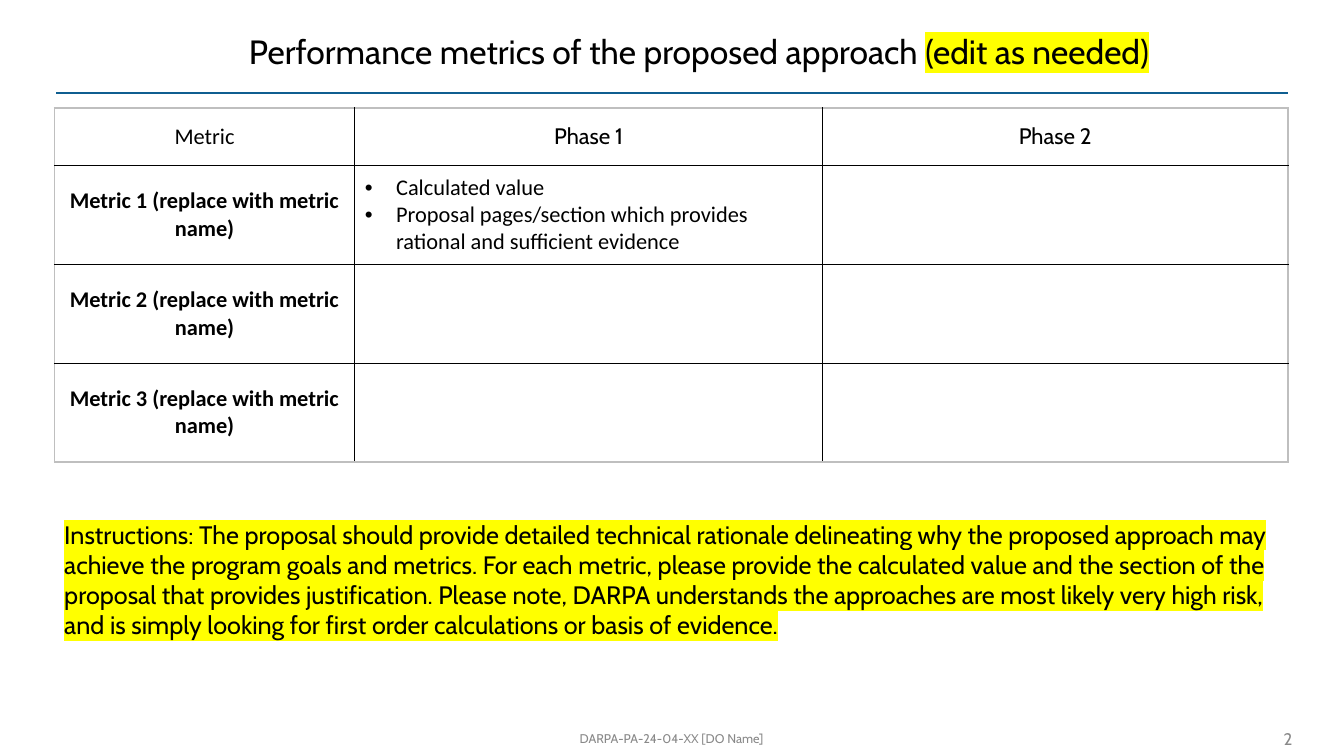
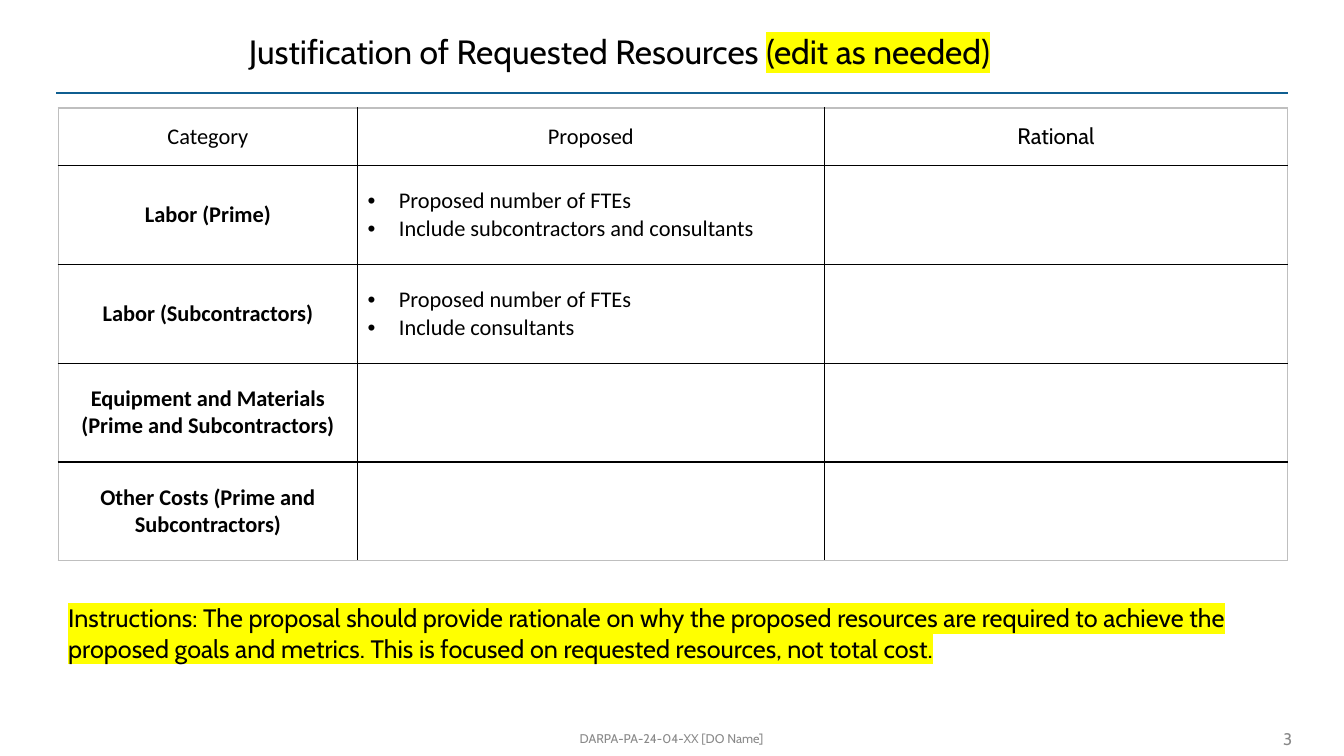
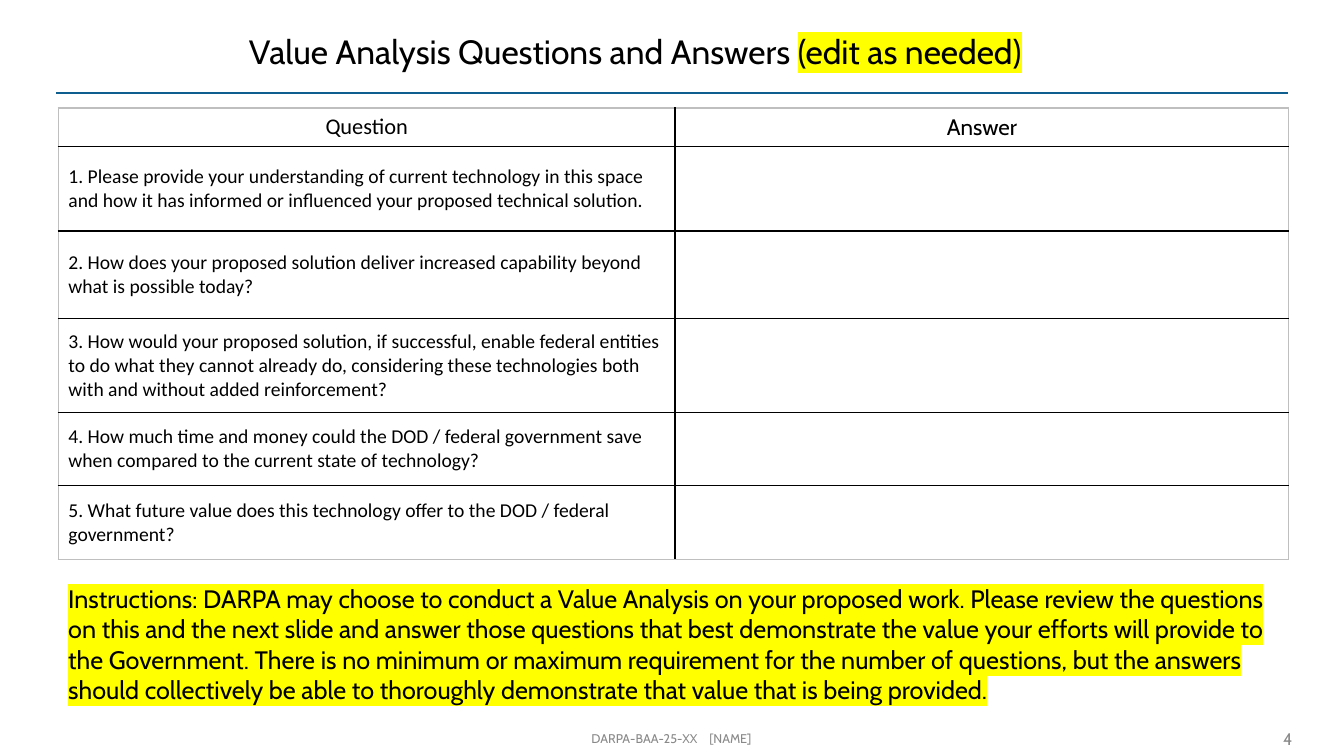
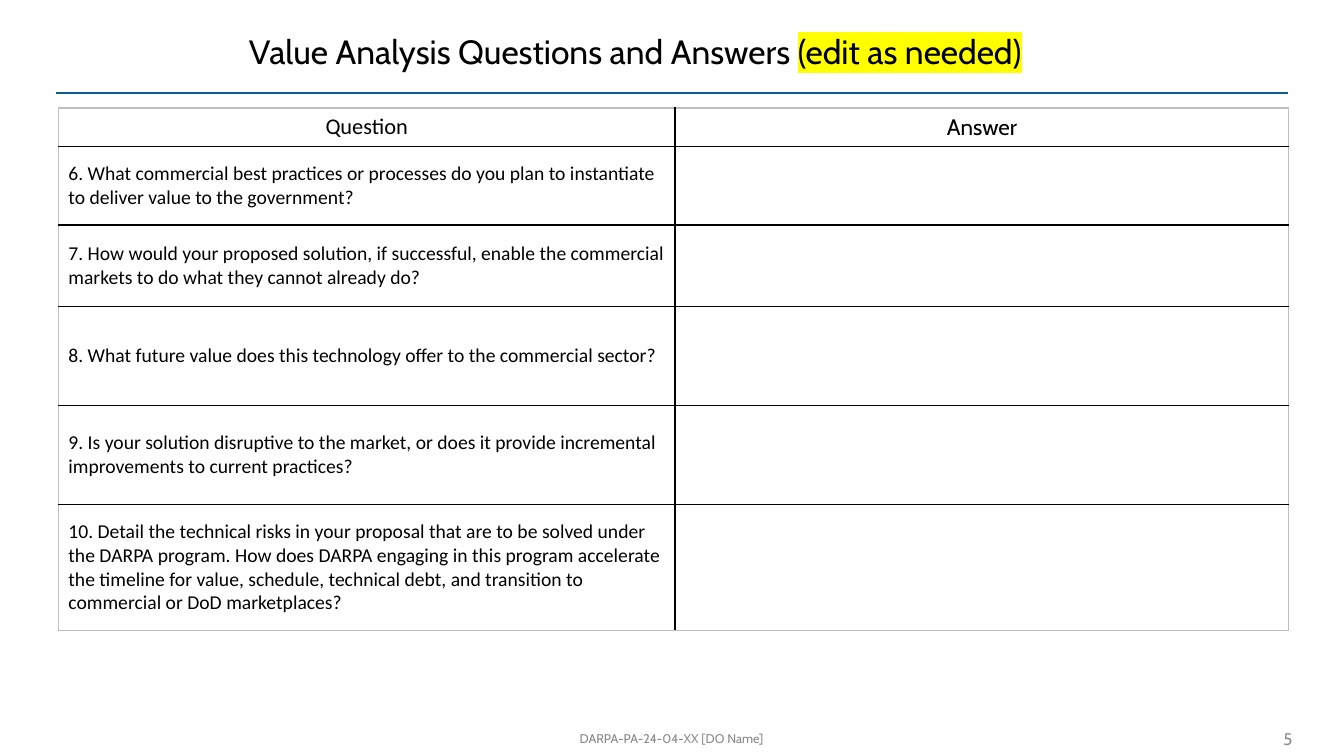
from lxml.etree import SubElement
from pptx import Presentation
from pptx.dml.color import RGBColor as RGB
from pptx.enum.shapes import MSO_CONNECTOR as CONN
from pptx.enum.text import MSO_ANCHOR as ANCHOR, MSO_AUTO_SIZE as AUTO, PP_ALIGN as ALIGN
from pptx.oxml.ns import qn
from pptx.util import Cm, Pt

COLORS = {
    "text": "000000",
    "rule": "0F5E90",
    "muted": "898989",
    "mark": "FFFF00",
    "cell": "FFFFFF",
    "grid": "000000",
    "edge": "BFBFBF",
}
TITLE_FONT, CELL_FONT = "Cabin", "Calibri"
TITLE_BOX = (6.02, 0.43, 26.44, 1.7)
RULE = (1.42, 2.34, 32.46, 2.34)
FOOTER_BOX = (4.93, 18.19, 23.98, 0.84)
NUMBER_BOX = (30, 18.21, 2.82, 0.81)
TABLE_TOP = 2.72
BULLET_INDENT = 0.79


def add_run(p, text, size, font=TITLE_FONT, color="text", bold=False, mark=False, spacing=0):
    r = p.add_run()
    r.text = text
    r.font.size = Pt(size)
    r.font.bold = bold
    r.font.color.rgb = RGB.from_string(COLORS[color])
    rPr = r.font._element
    if mark:
        SubElement(SubElement(rPr, qn("a:highlight")), qn("a:srgbClr"), val=COLORS["mark"])
    if spacing:
        rPr.set("spc", str(spacing))
    r.font.name = font


def add_text_box(s, box, align, anchor):
    tf = s.shapes.add_textbox(*map(Cm, box)).text_frame
    tf.word_wrap = True
    tf.vertical_anchor = anchor
    tf.paragraphs[0].alignment = align
    return tf


def add_title(s, text):
    sp = s.shapes.title
    sp.left, sp.top, sp.width, sp.height = map(Cm, TITLE_BOX)
    tf = sp.text_frame
    tf.vertical_anchor = ANCHOR.MIDDLE
    p = tf.paragraphs[0]
    p.alignment = ALIGN.LEFT
    add_run(p, text + " ", 24)
    add_run(p, "(edit as needed)", 24, mark=True)


def add_rule(s):
    line = s.shapes.add_connector(CONN.STRAIGHT, *map(Cm, RULE))
    line.line.color.rgb = RGB.from_string(COLORS["rule"])
    line.line.width = Pt(1.75)
    SubElement(line._element.spPr, qn("a:effectLst"))


def add_footer(s, parts, number):
    p = add_text_box(s, FOOTER_BOX, ALIGN.CENTER, ANCHOR.MIDDLE).paragraphs[0]
    for i, part in enumerate(parts):
        if i:
            add_run(p, " ", 9, color="muted", spacing=650)
        add_run(p, part, 9, color="muted")
    p = add_text_box(s, NUMBER_BOX, ALIGN.RIGHT, ANCHOR.MIDDLE).paragraphs[0]
    add_run(p, str(number), 12, color="muted")


def add_instructions(s, box, text):
    tf = add_text_box(s, box, ALIGN.LEFT, ANCHOR.TOP)
    tf.auto_size = AUTO.SHAPE_TO_FIT_TEXT
    add_run(tf.paragraphs[0], "Instructions: " + text, 18, mark=True)


def style_cell(cell, outer_sides):
    tcPr = cell._tc.get_or_add_tcPr()
    for side in ("L", "R", "T", "B"):
        ln = SubElement(tcPr, qn("a:ln" + side), w=str(Pt(1)))
        fill = SubElement(ln, qn("a:solidFill"))
        color = COLORS["edge" if side in outer_sides else "grid"]
        SubElement(fill, qn("a:srgbClr"), val=color)
    cell.fill.solid()
    cell.fill.fore_color.rgb = RGB.from_string(COLORS["cell"])
    cell.vertical_anchor = ANCHOR.MIDDLE


def add_bullets(cell, items):
    tf = cell.text_frame
    for i, item in enumerate(items):
        p = tf.add_paragraph() if i else tf.paragraphs[0]
        pPr = p._p.get_or_add_pPr()
        pPr.set("marL", str(Cm(BULLET_INDENT)))
        pPr.set("indent", str(-Cm(BULLET_INDENT)))
        SubElement(pPr, qn("a:buFont"), typeface="Arial")
        SubElement(pPr, qn("a:buChar"), char="•")
        add_run(p, item, 16, CELL_FONT)


def add_grid(s, left, widths, heights, headers):
    box = (left, TABLE_TOP, sum(widths), sum(heights))
    table = s.shapes.add_table(len(heights), len(widths), *map(Cm, box)).table
    table.first_row = table.horz_banding = False
    for col, width in zip(table.columns, widths):
        col.width = Cm(width)
    for row, height in zip(table.rows, heights):
        row.height = Cm(height)
    last_row, last_col = len(heights) - 1, len(widths) - 1
    for i in range(last_row + 1):
        for j in range(last_col + 1):
            at_edge = {"L": j == 0, "R": j == last_col, "T": i == 0, "B": i == last_row}
            style_cell(table.cell(i, j), [side for side, outer in at_edge.items() if outer])
    for j, (text, font) in enumerate(headers):
        p = table.cell(0, j).text_frame.paragraphs[0]
        p.alignment = ALIGN.CENTER
        add_run(p, text, 16, font)
    return table


def add_category_table(s, left, widths, headers, rows):
    table = add_grid(s, left, widths, [1.45] + [2.49] * len(rows), headers)
    for i, (label, bullets) in enumerate(rows, 1):
        p = table.cell(i, 0).text_frame.paragraphs[0]
        p.alignment = ALIGN.CENTER
        add_run(p, label, 16, CELL_FONT, bold=True)
        add_bullets(table.cell(i, 1), bullets)


def add_question_table(s, first, rows):
    headers = [("Question", CELL_FONT), ("Answer", TITLE_FONT)]
    heights = [0.97] + [height for height, _ in rows]
    table = add_grid(s, 1.47, [15.54, 15.47], heights, headers)
    for i, (_, question) in enumerate(rows, 1):
        p = table.cell(i, 0).text_frame.paragraphs[0]
        add_run(p, f"{first + i - 1}. {question}", 14, CELL_FONT)


def add_page(prs, title, number, footer=("DARPA-PA-24-04-XX [DO Name]",)):
    s = prs.slides.add_slide(prs.slide_layouts[5])
    add_rule(s)
    add_title(s, title)
    add_footer(s, footer, number)
    return s


def metrics_slide(prs):
    s = add_page(prs, "Performance metrics of the proposed approach", 2)
    evidence = [
        "Calculated value",
        "Proposal pages/section which provides rational and sufficient evidence",
    ]
    add_category_table(
        s, 1.37, [7.57, 11.79, 11.73],
        [("Metric", CELL_FONT), ("Phase 1", TITLE_FONT), ("Phase 2", TITLE_FONT)],
        [(f"Metric {n} (replace with metric name)", evidence if n == 1 else [])
         for n in (1, 2, 3)],
    )
    add_instructions(
        s, (1.37, 12.95, 31.09, 3.33),
        "The proposal should provide detailed technical rationale delineating why the "
        "proposed approach may achieve the program goals and metrics. For each metric, "
        "please provide the calculated value and the section of the proposal that provides "
        "justification. Please note, DARPA understands the approaches are most likely very "
        "high risk, and is simply looking for first order calculations or basis of evidence.",
    )


def resources_slide(prs):
    s = add_page(prs, "Justification of Requested Resources", 3)
    staff = "Proposed number of FTEs"
    add_category_table(
        s, 1.47, [7.54, 11.76, 11.68],
        [("Category", CELL_FONT), ("Proposed", CELL_FONT), ("Rational", TITLE_FONT)],
        [
            ("Labor (Prime)", [staff, "Include subcontractors and consultants"]),
            ("Labor (Subcontractors)", [staff, "Include consultants"]),
            ("Equipment and Materials (Prime and Subcontractors)", []),
            ("Other Costs (Prime and Subcontractors)", []),
        ],
    )
    add_instructions(
        s, (1.47, 15.06, 30.99, 1.8),
        "The proposal should provide rationale on why the proposed resources are required "
        "to achieve the proposed goals and metrics. This is focused on requested resources, "
        "not total cost.",
    )


def value_slides(prs):
    title = "Value Analysis Questions and Answers"
    s = add_page(prs, title, 4, ("DARPA-BAA-25-XX", "[NAME]"))
    add_question_table(s, 1, [
        (2.13, "Please provide your understanding of current technology in this space and "
               "how it has informed or influenced your proposed technical solution."),
        (2.21, "How does your proposed solution deliver increased capability beyond what is "
               "possible today?"),
        (2.36, "How would your proposed solution, if successful, enable federal entities to "
               "do what they cannot already do, considering these technologies both with and "
               "without added reinforcement?"),
        (1.85, "How much time and money could the DOD / federal government save when "
               "compared to the current state of technology?"),
        (1.85, "What future value does this technology offer to the DOD / federal "
               "government?"),
    ])
    add_instructions(
        s, (1.47, 14.58, 30.99, 4.11),
        "DARPA may choose to conduct a Value Analysis on your proposed work. Please review "
        "the questions on this and the next slide and answer those questions that best "
        "demonstrate the value your efforts will provide to the Government. There is no "
        "minimum or maximum requirement for the number of questions, but the answers should "
        "collectively be able to thoroughly demonstrate that value that is being provided.",
    )
    s = add_page(prs, title, 5)
    add_question_table(s, 6, [
        (1.98, "What commercial best practices or processes do you plan to instantiate to "
               "deliver value to the government?"),
        (2.06, "How would your proposed solution, if successful, enable the commercial "
               "markets to do what they cannot already do?"),
        (2.49, "What future value does this technology offer to the commercial sector?"),
        (2.49, "Is your solution disruptive to the market, or does it provide incremental "
               "improvements to current practices?"),
        (3.18, "Detail the technical risks in your proposal that are to be solved under the "
               "DARPA program. How does DARPA engaging in this program accelerate the "
               "timeline for value, schedule, technical debt, and transition to commercial "
               "or DoD marketplaces?"),
    ])


def main():
    prs = Presentation()
    prs.slide_width, prs.slide_height = Cm(33.87), Cm(19.05)
    metrics_slide(prs)
    resources_slide(prs)
    value_slides(prs)
    prs.save("out.pptx")


if __name__ == "__main__":
    main()
